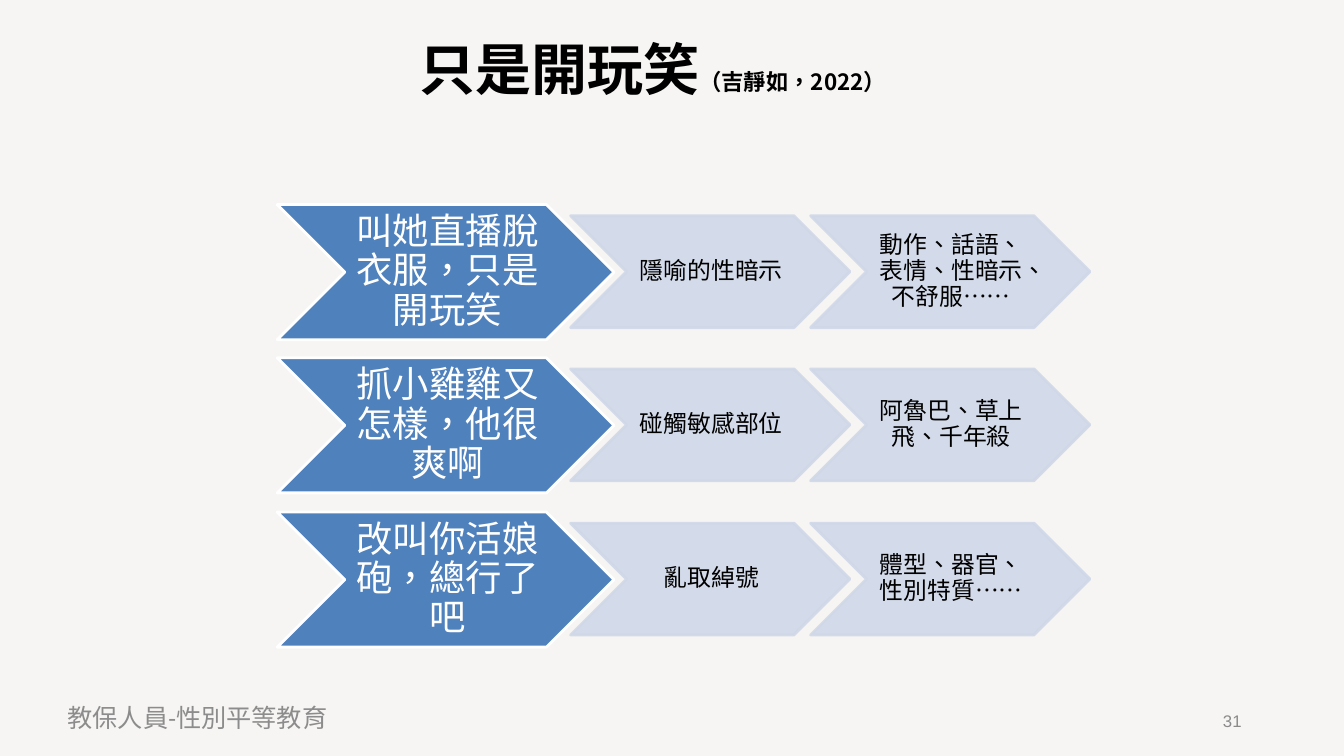
from lxml.etree import SubElement
from pptx import Presentation
from pptx.dml.color import RGBColor
from pptx.enum.lang import MSO_LANGUAGE_ID
from pptx.enum.shapes import MSO_SHAPE
from pptx.enum.text import MSO_ANCHOR, PP_ALIGN
from pptx.oxml.ns import qn
from pptx.util import Pt

PX = 9144  # 100 px to the inch
CJK_FONT = "Noto Sans CJK SC"
ROWS = [
    ("叫她直播脫衣服，只是開玩笑", "隱喻的性暗示", "動作、話語、表情、性暗示、不舒服⋯⋯"),
    ("抓小雞雞又怎樣，他很爽啊", "碰觸敏感部位", "阿魯巴、草上飛、千年殺"),
    ("改叫你活娘砲，總行了吧", "亂取綽號", "體型、器官、性別特質⋯⋯"),
]


def px(*lengths):
    return [length * PX for length in lengths]


def paint(color_format, color):
    color_format.rgb = RGBColor.from_string(color)


def set_insets(frame, left=0, top=0, right=0, bottom=0):
    frame.margin_left, frame.margin_top, frame.margin_right, frame.margin_bottom = px(
        left, top, right, bottom)


def write(paragraph, text, size, color, font="Calibri", bold=False):
    run = paragraph.add_run()
    run.text = text
    run.font.size = Pt(size)
    run.font.bold = bold
    run.font.name = font
    run.font.language_id = MSO_LANGUAGE_ID.TRADITIONAL_CHINESE
    paint(run.font.color, color)
    SubElement(run.font._element, qn("a:ea"), typeface=CJK_FONT)


def add_label(slide, left, top, width, height):
    """Add an empty text box without insets and return its paragraph."""
    frame = slide.shapes.add_textbox(*px(left, top, width, height)).text_frame
    frame.word_wrap = True
    set_insets(frame)
    return frame.paragraphs[0]


def make_translucent(fill, percent):
    color = fill._xPr.find(qn("a:solidFill"))[0]
    SubElement(color, qn("a:alpha"), val=str(percent * 1000))


def add_chevron(slide, box, text, size, fill, line, color, insets, opacity=100):
    chevron = slide.shapes.add_shape(MSO_SHAPE.CHEVRON, *px(*box))
    chevron.shadow.inherit = False
    chevron.fill.solid()
    paint(chevron.fill.fore_color, fill)
    chevron.line.width = Pt(2)
    paint(chevron.line.color, line)
    if opacity < 100:
        make_translucent(chevron.fill, opacity)
        make_translucent(chevron.line.fill, opacity)
    frame = chevron.text_frame
    frame.word_wrap = True
    frame.vertical_anchor = MSO_ANCHOR.MIDDLE
    set_insets(frame, *insets)
    paragraph = frame.paragraphs[0]
    paragraph.alignment = PP_ALIGN.CENTER
    paragraph.line_spacing = 0.9
    write(paragraph, text, size, color)


def add_row(slide, top, excuse, *details):
    add_chevron(slide, (275, top, 334, 134), excuse, 26,
                "4F81BD", "FFFFFF", "FFFFFF", (4, 2, 0, 2))
    for column, detail in enumerate(details):
        add_chevron(slide, (566 + 238 * column, top + 11, 277, 111), detail, 17,
                    "D0D8E8", "D0D8E8", "000000", (2, 1, 0, 1), opacity=90)


def main():
    deck = Presentation()
    deck.slide_width, deck.slide_height = px(1333, 750)
    slide = deck.slides.add_slide(deck.slide_layouts[6])
    slide.background.fill.solid()
    paint(slide.background.fill.fore_color, "F6F5F3")

    title = add_label(slide, 416, 34, 502, 67)
    write(title, "只是開玩笑", 40, "000000", CJK_FONT, bold=True)
    write(title, "（吉靜如，2022）", 16, "000000", CJK_FONT, bold=True)

    for index, row in enumerate(ROWS):
        add_row(slide, 203 + 305 * index // 2, *row)

    write(add_label(slide, 67, 697, 307, 38), "教保人員-性別平等教育", 18, "8C8C8C")
    page_number = add_label(slide, 1213, 705, 24, 21)
    page_number.line_spacing = Pt(14.2)
    write(page_number, "31", 12, "8A8A8A", "Arial")

    deck.save("out.pptx")


if __name__ == "__main__":
    main()
